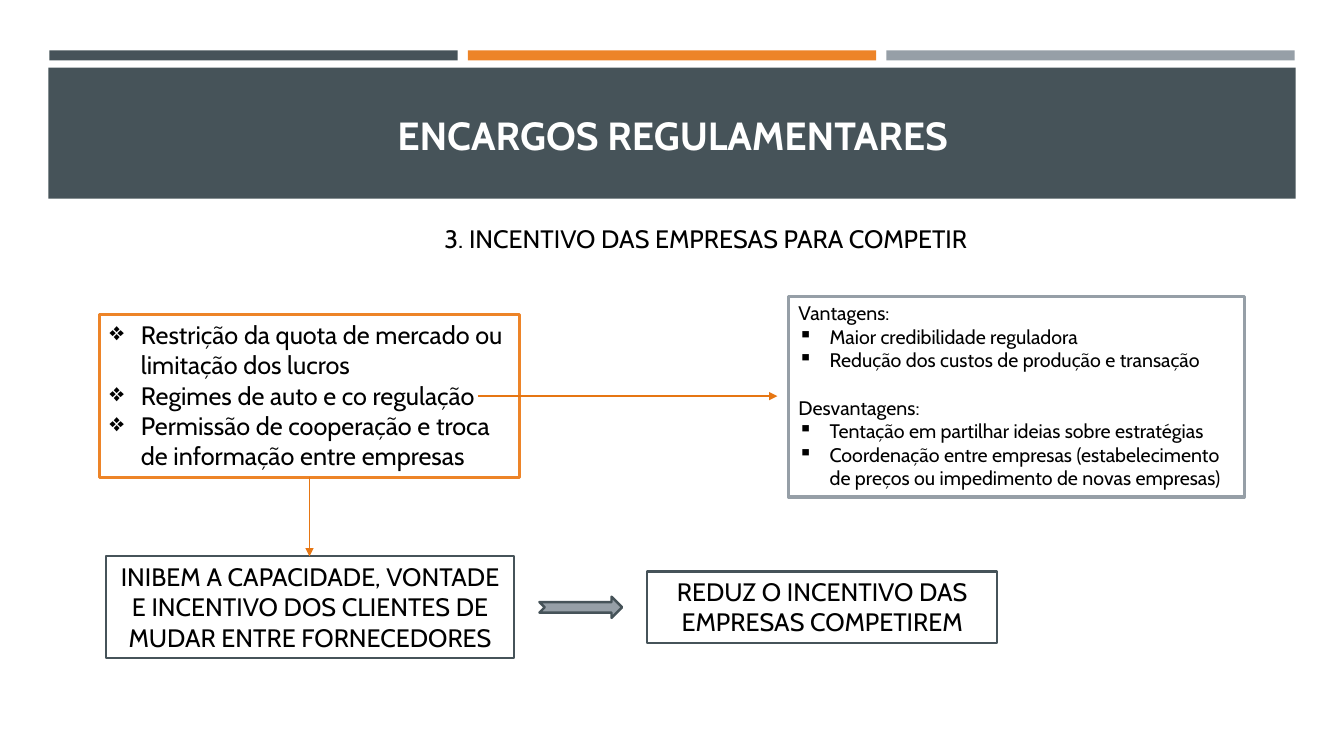
from lxml import etree
from pptx import Presentation
from pptx.dml.color import RGBColor
from pptx.enum import shapes, text
from pptx.oxml import ns
from pptx.util import Inches, Pt

COLORS = {
    "slate": "465359",
    "orange": "ED8428",
    "gray": "969FA7",
    "arrow": "E67613",
    "black": "000000",
    "white": "FFFFFF",
}
FONT = "Cabin"
HANGING = 0.31


def rgb(name):
    return RGBColor.from_string(COLORS[name])


def add_element(parent, tag, **attributes):
    return etree.SubElement(parent, ns.qn(tag), **attributes)


class SlideBuilder:
    """Holds the current slide and the shared text and line style."""

    def __init__(self, page):
        self.page = page

    def shape(self, area, fill=None, line=None, width=1,
              kind=shapes.MSO_SHAPE.RECTANGLE):
        shape = self.page.shapes.add_shape(kind, *map(Inches, area))
        shape.shadow.inherit = False
        if fill:
            shape.fill.solid()
            shape.fill.fore_color.rgb = rgb(fill)
        else:
            shape.fill.background()
        if line:
            shape.line.color.rgb = rgb(line)
            shape.line.width = Pt(width)
        else:
            shape.line.fill.background()
        return shape

    def add_lines(self, box, lines, size=18, color="black", bold=False,
                  centered=False, anchor=text.MSO_ANCHOR.TOP):
        """Fill a box with (wording, bullet, space before) lines."""
        frame = box.text_frame
        frame.word_wrap = True
        frame.vertical_anchor = anchor
        for index, (wording, bullet, space) in enumerate(lines):
            para = frame.add_paragraph() if index else frame.paragraphs[0]
            para.alignment = text.PP_ALIGN.CENTER if centered else text.PP_ALIGN.LEFT
            para.space_before = Pt(space)
            if bullet:
                self.bullet(para, bullet)
            span = para.add_run()
            span.text = wording
            span.font.name = FONT
            span.font.size = Pt(size)
            span.font.bold = bold
            span.font.color.rgb = rgb(color)

    def bullet(self, para, symbol):
        properties = para._p.get_or_add_pPr()
        properties.set("marL", str(Inches(HANGING)))
        properties.set("indent", str(-Inches(HANGING)))
        add_element(properties, "a:buChar", char=symbol)

    def text_box(self, area, wording, **style):
        box = self.page.shapes.add_textbox(*map(Inches, area))
        self.add_lines(box, [(wording, None, 0)], **style)

    def framed_text(self, area, line, width, lines, **style):
        self.add_lines(self.shape(area, line=line, width=width), lines, **style)

    def arrow(self, start, end):
        connector = self.page.shapes.add_connector(
            shapes.MSO_CONNECTOR.STRAIGHT, *map(Inches, start + end))
        connector.line.color.rgb = rgb("arrow")
        connector.line.width = Pt(1)
        properties = connector._element.spPr
        add_element(properties.find(ns.qn("a:ln")), "a:tailEnd", type="triangle")
        add_element(properties, "a:effectLst")


def main():
    deck = Presentation()
    deck.slide_width, deck.slide_height = Inches(13.33), Inches(7.5)
    slide = SlideBuilder(deck.slides.add_slide(deck.slide_layouts[6]))

    for column, color in enumerate(("slate", "orange", "gray")):
        slide.shape((0.49 + column * 4.15, 0.5, 4.05, 0.1), fill=color)
    slide.shape((0.48, 0.67, 12.37, 1.3), fill="slate")
    slide.text_box((0.64, 0.97, 12.06, 0.65), "ENCARGOS REGULAMENTARES", size=28,
                   color="white", bold=True, centered=True,
                   anchor=text.MSO_ANCHOR.BOTTOM)
    slide.text_box((4.31, 2.17, 5.42, 0.4), "3. INCENTIVO DAS EMPRESAS PARA COMPETIR")

    slide.framed_text((0.99, 3.12, 4.16, 1.62), "orange", 2.25, [
        ("Restrição da quota de mercado ou limitação dos lucros", "❖", 0),
        ("Regimes de auto e co regulação", "❖", 0),
        ("Permissão de cooperação e troca de informação entre empresas", "❖", 0),
    ])
    slide.framed_text((7.82, 2.94, 4.52, 1.99), "gray", 2.25, [
        ("Vantagens:", None, 0),
        ("Maior credibilidade reguladora", "▪", 0),
        ("Redução dos custos de produção e transação", "▪", 0),
        ("Desvantagens:", None, 17),
        ("Tentação em partilhar ideias sobre estratégias", "▪", 0),
        ("Coordenação entre empresas (estabelecimento de preços ou impedimento "
         "de novas empresas)", "▪", 0),
    ], size=14)

    outcomes = [
        ((6.42, 5.67, 3.47, 0.71), "REDUZ O INCENTIVO DAS EMPRESAS COMPETIREM"),
        ((1.05, 5.52, 4.05, 1.01), "INIBEM A CAPACIDADE, VONTADE E INCENTIVO DOS "
                                   "CLIENTES DE MUDAR ENTRE FORNECEDORES"),
    ]
    for area, wording in outcomes:
        slide.framed_text(area, "slate", 1.5, [(wording, None, 0)], centered=True)

    slide.arrow((4.74, 3.93), (7.71, 3.93))
    slide.arrow((3.07, 4.73), (3.07, 5.52))
    slide.shape((5.35, 5.92, 0.82, 0.21), fill="gray", line="slate", width=1.75,
                kind=shapes.MSO_SHAPE.NOTCHED_RIGHT_ARROW)

    deck.save("out.pptx")


if __name__ == "__main__":
    main()
